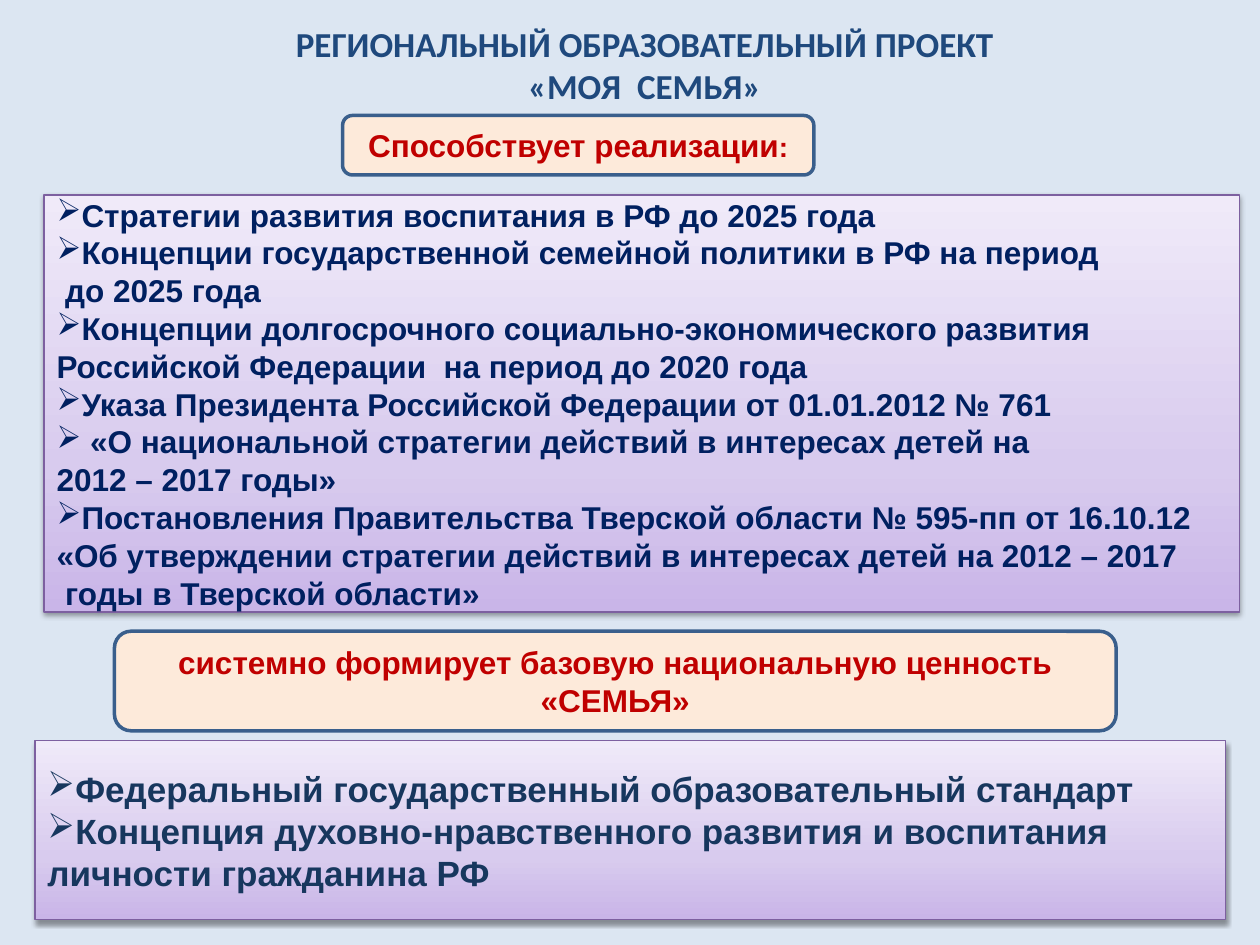
from copy import deepcopy

from pptx import Presentation
from pptx.dml.color import RGBColor
from pptx.enum.shapes import MSO_SHAPE as Shape
from pptx.enum.text import MSO_ANCHOR as Anchor, PP_ALIGN as Align
from pptx.oxml import parse_xml
from pptx.oxml.ns import nsdecls, qn
from pptx.util import Pt

COLORS = {
    "background": "DCE6F2",
    "title": "1F497D",
    "caption_fill": "FDEADA",
    "caption_line": "3A5F8C",
    "caption_text": "C00000",
    "panel_line": "7D60A0",
    "documents_text": "002060",
    "standards_text": "17375E",
}
PANEL_STOPS = [(0, "C9B5E8"), (0.35, "D8CBEE"), (1, "F0EAF9")]

# Each line: (has a bullet, text)
DOCUMENTS = [
    (True, "Стратегии развития воспитания в РФ до 2025 года"),
    (True, "Концепции государственной семейной политики в РФ на период"),
    (False, " до 2025 года"),
    (True, "Концепции долгосрочного социально-экономического развития"),
    (False, "Российской Федерации  на период до 2020 года"),
    (True, "Указа Президента Российской Федерации от 01.01.2012 № 761"),
    (True, " «О национальной стратегии действий в интересах детей на"),
    (False, "2012 – 2017 годы»"),
    (True, "Постановления Правительства Тверской области № 595-пп от 16.10.12"),
    (False, "«Об утверждении стратегии действий в интересах детей на 2012 – 2017"),
    (False, " годы в Тверской области»"),
]
STANDARDS = [
    (True, "Федеральный государственный образовательный стандарт"),
    (True, "Концепция духовно-нравственного развития и воспитания"),
    (False, "личности гражданина РФ"),
]


def rgb(name):
    return RGBColor.from_string(COLORS[name])


def place(shape, box):
    shape.left, shape.top, shape.width, shape.height = (Pt(value) for value in box)


def add_run(paragraph, text, size, color, font="Arial"):
    run = paragraph.add_run()
    run.text = text
    run.font.name = font
    run.font.size = Pt(size)
    run.font.bold = True
    run.font.color.rgb = rgb(color)


def next_paragraph(frame, index, alignment):
    paragraph = frame.add_paragraph() if index else frame.paragraphs[0]
    paragraph.alignment = alignment
    return paragraph


def add_box(slide, kind, box, line, line_width):
    shape = slide.shapes.add_shape(kind, *(Pt(value) for value in box))
    shape.shadow.inherit = False
    shape.line.color.rgb = rgb(line)
    shape.line.width = Pt(line_width)
    shape.text_frame.word_wrap = True
    shape.text_frame.vertical_anchor = Anchor.MIDDLE
    return shape


def add_title(slide, box, lines):
    title = slide.shapes.title
    place(title, box)
    frame = title.text_frame
    frame.word_wrap = True
    frame.vertical_anchor = Anchor.TOP
    for index, text in enumerate(lines):
        paragraph = next_paragraph(frame, index, Align.CENTER)
        add_run(paragraph, text, 20, "title", "Calibri")


def add_caption(slide, box, runs):
    shape = add_box(slide, Shape.ROUNDED_RECTANGLE, box, "caption_line", 2)
    shape.fill.solid()
    shape.fill.fore_color.rgb = rgb("caption_fill")
    paragraph = next_paragraph(shape.text_frame, 0, Align.CENTER)
    for text, size in runs:
        add_run(paragraph, text, size, "caption_text")


def fill_panel(shape):
    shape.fill.gradient()
    shape.fill.gradient_angle = 90
    stop_list = shape.element.spPr.find(qn("a:gradFill")).find(qn("a:gsLst"))
    stop_list.append(deepcopy(stop_list[0]))
    for stop, (position, color) in zip(shape.fill.gradient_stops, PANEL_STOPS):
        stop.position = position
        stop.color.rgb = RGBColor.from_string(color)


def add_shadow(shape):
    shape.element.spPr.find(qn("a:effectLst")).append(parse_xml(
        f'<a:outerShdw {nsdecls("a")} blurRad="{Pt(3.1)}" dist="{Pt(1.6)}" '
        'dir="5400000" rotWithShape="0"><a:srgbClr val="000000">'
        '<a:alpha val="38000"/></a:srgbClr></a:outerShdw>'))


def add_panel(slide, box, lines, size, color):
    shape = add_box(slide, Shape.RECTANGLE, box, "panel_line", 0.75)
    fill_panel(shape)
    add_shadow(shape)
    for index, (bulleted, text) in enumerate(lines):
        paragraph = next_paragraph(shape.text_frame, index, Align.JUSTIFY)
        if bulleted:
            paragraph._p.get_or_add_pPr().append(
                parse_xml(f'<a:buChar {nsdecls("a")} char="➢"/>'))
        add_run(paragraph, text, size, color)


def main():
    presentation = Presentation()
    presentation.slide_width, presentation.slide_height = Pt(720), Pt(540)
    slide = presentation.slides.add_slide(presentation.slide_layouts.get_by_name("Title Only"))
    slide.background.fill.solid()
    slide.background.fill.fore_color.rgb = rgb("background")

    # Heading
    add_title(slide, (116, 9.4, 505, 55.4),
              ["РЕГИОНАЛЬНЫЙ ОБРАЗОВАТЕЛЬНЫЙ ПРОЕКТ", "«МОЯ  СЕМЬЯ»"])

    # Documents the project supports
    add_caption(slide, (195.8, 66, 269.3, 34),
                [("Способствует реализации", 18), (":", 16)])
    add_panel(slide, (25.2, 111.4, 683.3, 238.3), DOCUMENTS, 18, "documents_text")

    # Value the project forms
    add_caption(slide, (65.4, 360.7, 572.4, 56.9),
                [("системно формирует базовую национальную ценность «СЕМЬЯ»", 18)])
    add_panel(slide, (20, 423.3, 680.4, 102.2), STANDARDS, 20, "standards_text")

    presentation.save("out.pptx")


if __name__ == "__main__":
    main()
